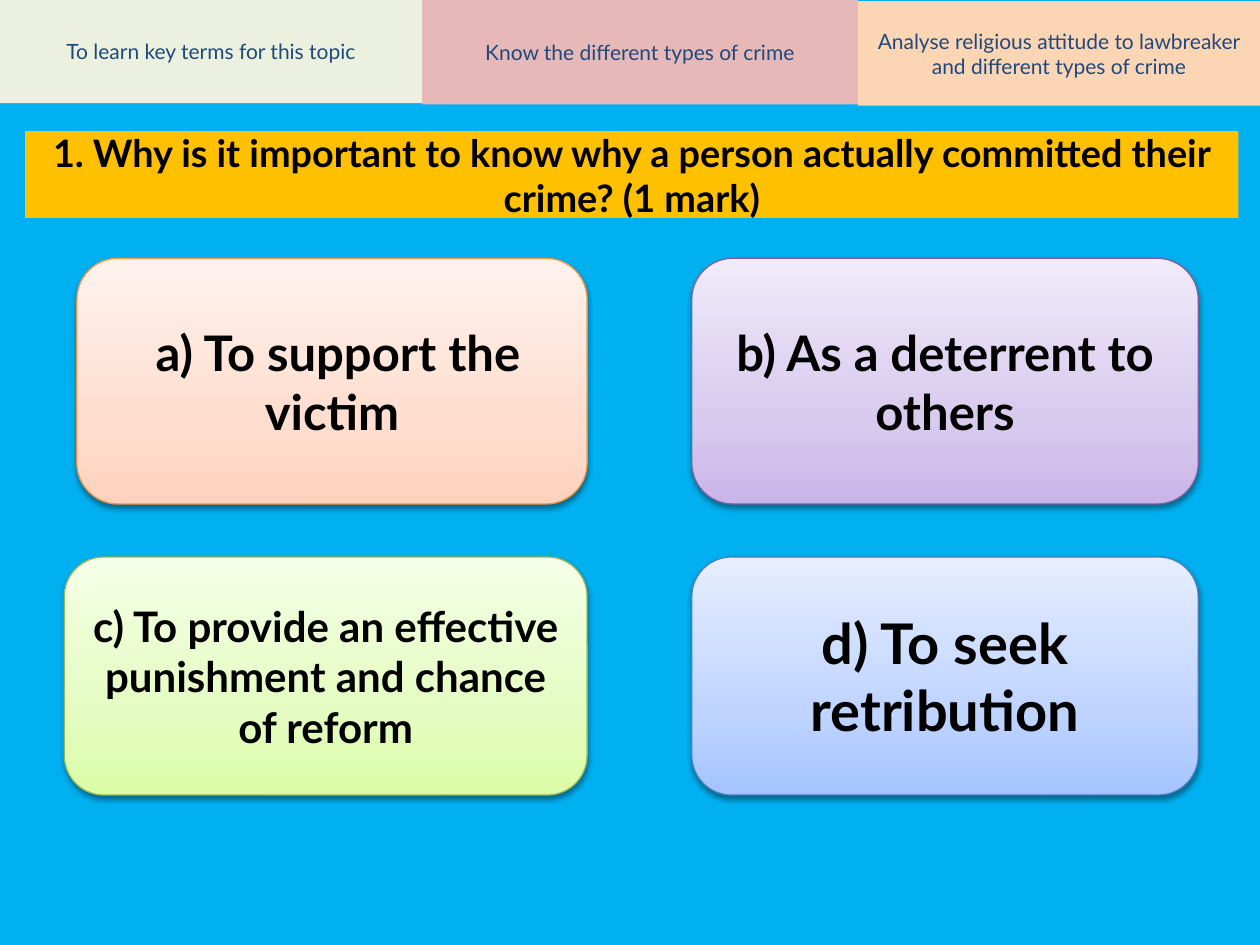
"""Build a multiple-choice question slide with three lesson goals on top."""
import copy

import pptx
import pptx.dml.color
import pptx.enum.shapes
import pptx.enum.text
import pptx.oxml
import pptx.oxml.ns
import pptx.util

INCH, PT = pptx.util.Inches, pptx.util.Pt
KIND = pptx.enum.shapes.MSO_SHAPE

HUES = {
    "back": "00B0F0", "bar": "FFC000", "ink": "000000", "navy": "1F497D",
    "sage": "EBF1DE", "rose": "E6B9B8", "peach": "FCD5B5",
}
FADES = {
    "orange": ("F69240", "FFD2BD", "FFDED0", "FFF2ED"),
    "purple": ("7D60A0", "C9B5E8", "D8CBEE", "F0EAF9"),
    "green": ("98B955", "DAFDA7", "E4FCC2", "F5FFE7"),
    "blue": ("4B7EBC", "A4C4FF", "BFD4FF", "E6EEFF"),
}
STOPS = (0, 0.35, 1)

GOALS = [
    ("To learn key terms for this topic", "sage", -0.01),
    ("Know the different types of crime", "rose", 0),
    ("Analyse religious attitude to lawbreaker and different types of crime", "peach", 0.01),
]
EDGES = (0, 3.35, 6.81, 10)
TALL = 0.83

TITLE = "1. Why is it important to know why a person actually committed their crime? (1 mark)"

CARDS = [
    [(" a) To support the victim", "orange", 28, 0.61),
     ("b) As a deterrent to others", "purple", 28, 5.49)],
    [("c) To provide an effective punishment and chance of reform", "green", 24, 0.51),
     ("d) To seek retribution", "blue", 32, 5.49)],
]
ROWS = ((2.05, 1.95), (4.42, 1.89))
RIGHTS = (4.66, 9.51)

SHADE = (
    '<a:outerShdw %s blurRad="40000" dist="23000" dir="5400000" rotWithShape="0">'
    '<a:srgbClr val="000000"><a:alpha val="38000"/></a:srgbClr></a:outerShdw>'
    % pptx.oxml.ns.nsdecls("a")
)


def rgb(code):
    return pptx.dml.color.RGBColor.from_string(code)


def box(slide, kind, area, text, size, ink, bold=False):
    shape = slide.shapes.add_shape(kind, *map(INCH, area))
    shape.shadow.inherit = False
    shape.line.fill.background()
    frame = shape.text_frame
    frame.word_wrap = True
    frame.vertical_anchor = pptx.enum.text.MSO_ANCHOR.MIDDLE
    frame.text = text
    para = frame.paragraphs[0]
    para.alignment = pptx.enum.text.PP_ALIGN.CENTER
    font = para.runs[0].font
    font.name, font.size, font.bold = "Lato", PT(size), bold
    font.color.rgb = rgb(HUES[ink])
    return shape


def paint(shape, hue):
    shape.fill.solid()
    shape.fill.fore_color.rgb = rgb(HUES[hue])


def fade(shape, hue):
    edge, *tones = FADES[hue]
    shape.line.color.rgb = rgb(edge)
    shape.line.width = PT(0.75)
    shape.fill.gradient()
    shape.fill.gradient_angle = 90
    props = shape._element.spPr
    stops = props.find(".//" + pptx.oxml.ns.qn("a:gsLst"))
    stops.append(copy.deepcopy(stops[0]))
    for stop, spot, tone in zip(shape.fill.gradient_stops, STOPS, tones):
        stop.position = spot
        stop.color.rgb = rgb(tone)
    glow = props.find(pptx.oxml.ns.qn("a:effectLst"))
    glow.append(pptx.oxml.parse_xml(SHADE))


def main():
    deck = pptx.Presentation()
    deck.slide_width, deck.slide_height = INCH(10), INCH(7.5)
    slide = deck.slides.add_slide(deck.slide_layouts[6])
    slide.background.fill.solid()
    slide.background.fill.fore_color.rgb = rgb(HUES["back"])

    bar = box(slide, KIND.RECTANGLE, (0.2, 1.04, 9.63, 0.69), TITLE, 21.6, "ink", True)
    paint(bar, "bar")
    for (text, hue, top), left, right in zip(GOALS, EDGES, EDGES[1:]):
        area = (left, top, right - left, TALL)
        paint(box(slide, KIND.RECTANGLE, area, text, 12, "navy"), hue)
    for cards, (top, high) in zip(CARDS, ROWS):
        for (text, hue, size, left), right in zip(cards, RIGHTS):
            area = (left, top, right - left, high)
            fade(box(slide, KIND.ROUNDED_RECTANGLE, area, text, size, "ink", True), hue)
    deck.save("out.pptx")


if __name__ == "__main__":
    main()
